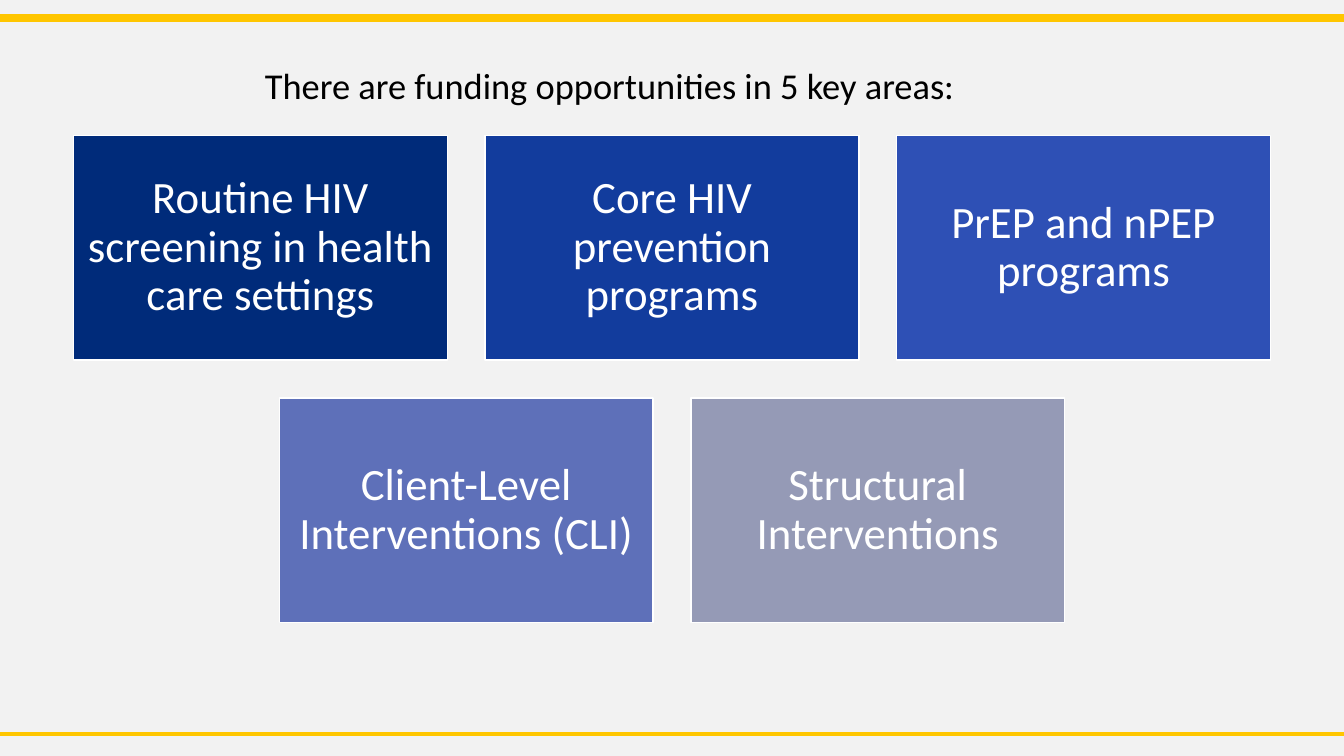
from dataclasses import dataclass

from lxml import etree
from pptx import Presentation
from pptx.dml.color import RGBColor
from pptx.enum.shapes import MSO_CONNECTOR, MSO_SHAPE
from pptx.enum.text import MSO_ANCHOR, MSO_AUTO_SIZE, PP_ALIGN
from pptx.oxml.ns import qn
from pptx.util import Pt

PX = 9525
WIDE, HIGH = 1280, 720
RECT = MSO_SHAPE.RECTANGLE
LINE = MSO_CONNECTOR.STRAIGHT
TOP, MIDDLE = MSO_ANCHOR.TOP, MSO_ANCHOR.MIDDLE
CENTER = PP_ALIGN.CENTER
NO_FIT = MSO_AUTO_SIZE.NONE
TITLE_ONLY = 5


@dataclass(frozen=True)
class Theme:
    font: str = "Calibri"
    back: str = "F2F2F2"
    gold: str = "FFC600"
    white: str = "FFFFFF"
    black: str = "000000"
    title: int = 26
    body: int = 32


THEME = Theme()

TITLE = "There are funding opportunities in 5 key areas:"
ROWS = [
    [
        ("Routine HIV screening in health care settings", "002B7A"),
        ("Core HIV prevention programs", "123C9D"),
        ("PrEP and nPEP programs", "2E50B5"),
    ],
    [
        ("Client-Level Interventions (CLI)", "5E70B9"),
        ("Structural Interventions", "959AB6"),
    ],
]
CARD_W, CARD_H, GAP, GRID_TOP = 356, 214, 36, 129


def px(*sizes):
    return [size * PX for size in sizes]


def rgb(code):
    return RGBColor.from_string(code)


def set_text(shape, text, size, color, inset, anchor, pitch):
    frame = shape.text_frame
    frame.text = text
    frame.word_wrap = True
    frame.auto_size = NO_FIT
    frame.vertical_anchor = anchor
    frame.margin_left = frame.margin_right = inset * PX
    frame.margin_top = frame.margin_bottom = inset * PX
    para = frame.paragraphs[0]
    para.alignment = CENTER
    para.line_spacing = pitch
    para.space_before = Pt(0)
    font = para.runs[0].font
    font.name = THEME.font
    font.size = Pt(size)
    font.color.rgb = rgb(color)


def add_rule(slide, y, weight):
    rule = slide.shapes.add_connector(LINE, *px(0, y, WIDE, y))
    rule.line.color.rgb = rgb(THEME.gold)
    rule.line.width = Pt(weight)
    etree.SubElement(rule._element.spPr, qn("a:effectLst"))


def add_title(slide):
    title = slide.shapes.title
    title.left, title.top, title.width, title.height = px(48, 55, 1066, 46)
    set_text(title, TITLE, THEME.title, THEME.black, 5, TOP, 1.0)


def add_card(slide, left, top, text, color):
    card = slide.shapes.add_shape(RECT, *px(left, top, CARD_W, CARD_H))
    card.shadow.inherit = False
    card.fill.solid()
    card.fill.fore_color.rgb = rgb(color)
    card.line.color.rgb = rgb(THEME.white)
    card.line.width = Pt(1)
    set_text(card, text, THEME.body, THEME.white, 12, MIDDLE, 0.9)


def add_cards(slide):
    for row, cards in enumerate(ROWS):
        span = len(cards) * (CARD_W + GAP) - GAP
        start = (WIDE - span) // 2
        top = GRID_TOP + row * (CARD_H + GAP)
        for col, (text, color) in enumerate(cards):
            add_card(slide, start + col * (CARD_W + GAP), top, text, color)


def main():
    deck = Presentation()
    deck.slide_width, deck.slide_height = px(WIDE, HIGH)
    slide = deck.slides.add_slide(deck.slide_layouts[TITLE_ONLY])
    slide.background.fill.solid()
    slide.background.fill.fore_color.rgb = rgb(THEME.back)
    add_rule(slide, 699, 3)
    add_rule(slide, 17, 6)
    add_title(slide)
    add_cards(slide)
    deck.save("out.pptx")


if __name__ == "__main__":
    main()
